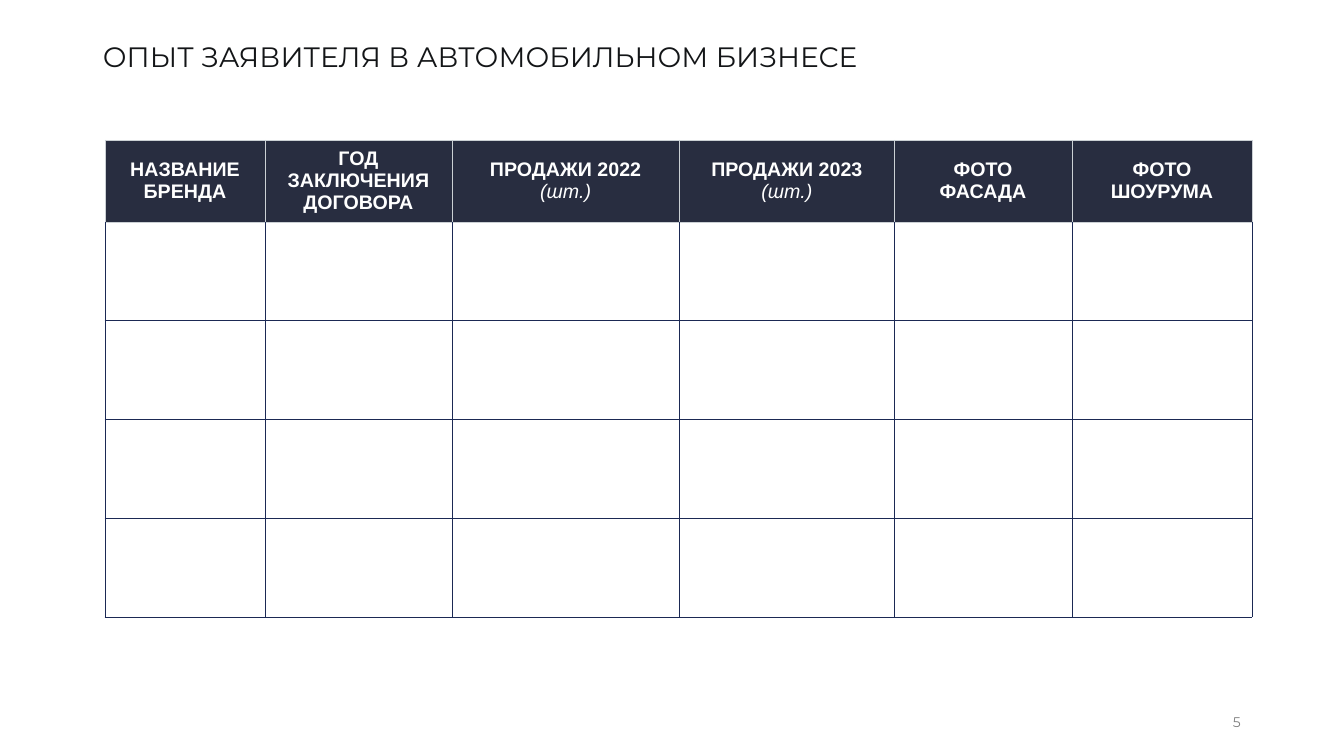
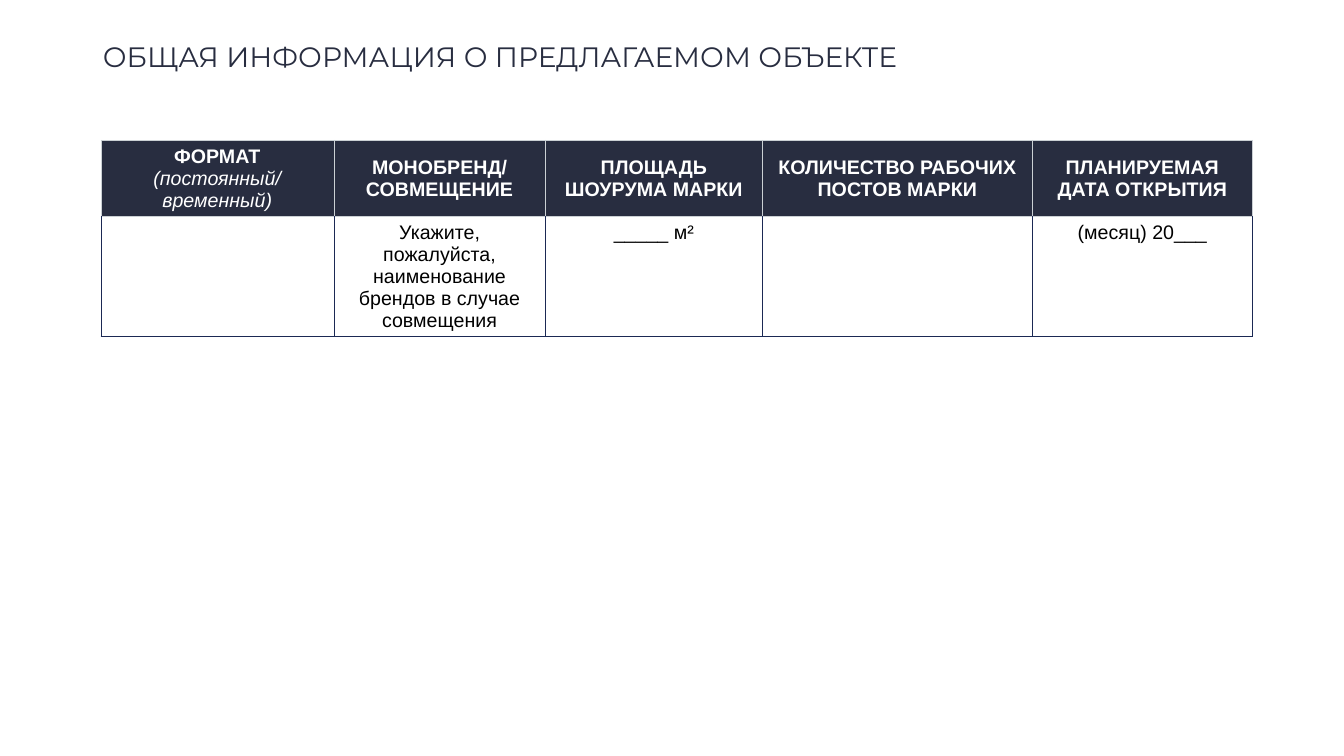
from lxml import etree
from pptx import Presentation
from pptx.dml.color import RGBColor
from pptx.enum.text import MSO_ANCHOR, PP_ALIGN
from pptx.oxml.ns import qn
from pptx.util import Pt

LEFT, CENTER = PP_ALIGN.LEFT, PP_ALIGN.CENTER
MIDDLE, TOP = MSO_ANCHOR.MIDDLE, MSO_ANCHOR.TOP

WHITE = RGBColor(0xFF, 0xFF, 0xFF)
BLACK = RGBColor(0x00, 0x00, 0x00)
INK = RGBColor(0x13, 0x15, 0x17)
DARK = RGBColor(0x28, 0x2D, 0x40)
NAVY = RGBColor(0x1B, 0x29, 0x54)
PALE = RGBColor(0xCB, 0xD0, 0xD4)
GRAY = RGBColor(0x80, 0x80, 0x80)

HEAD_FONT, CELL_FONT = "Montserrat", "Arial"
SCALE = 9144
SIZE = (1333, 750)
TITLE_BOX = (92, 22, 1150, 72)
PAGE_BOX = (1213, 702, 41, 29)
TABLE_TOP = 139

SLIDES = [
    {
        "title": "ОПЫТ ЗАЯВИТЕЛЯ В АВТОМОБИЛЬНОМ БИЗНЕСЕ",
        "color": INK,
        "page": "5",
        "left": 104,
        "cols": [159, 185, 226, 213, 176, 179],
        "rows": [81] + [98] * 4,
        "head": [
            ["НАЗВАНИЕ БРЕНДА"],
            ["ГОД ЗАКЛЮЧЕНИЯ ДОГОВОРА"],
            ["ПРОДАЖИ 2022", "(шт.)"],
            ["ПРОДАЖИ 2023", "(шт.)"],
            ["ФОТО", "ФАСАДА"],
            ["ФОТО", "ШОУРУМА"],
        ],
        "body": [[""] * 6] * 4,
    },
    {
        "title": "ОБЩАЯ ИНФОРМАЦИЯ О ПРЕДЛАГАЕМОМ ОБЪЕКТЕ",
        "color": DARK,
        "page": "",
        "left": 100,
        "cols": [231, 210, 215, 268, 218],
        "rows": [72, 118],
        "head": [
            ["ФОРМАТ", "(постоянный/", "временный)"],
            ["МОНОБРЕНД/ СОВМЕЩЕНИЕ"],
            ["ПЛОЩАДЬ ШОУРУМА МАРКИ"],
            ["КОЛИЧЕСТВО РАБОЧИХ ПОСТОВ МАРКИ"],
            ["ПЛАНИРУЕМАЯ ДАТА ОТКРЫТИЯ"],
        ],
        "body": [[
            "",
            "Укажите, пожалуйста, наименование брендов в случае совмещения",
            "_____ м²",
            "",
            "(месяц) 20___",
        ]],
    },
]


def px(n):
    return n * SCALE


def place(shape, box):
    shape.left, shape.top, shape.width, shape.height = map(px, box)


def style(para, face, size, color, align):
    para.alignment = align
    font = para.font
    font.name, font.size, font.color.rgb = face, Pt(size), color


def border(cell, side, color):
    props = cell._tc.get_or_add_tcPr()
    line = etree.SubElement(props, qn(f"a:ln{side}"), w=str(Pt(0.25)))
    fill = etree.SubElement(line, qn("a:solidFill"))
    etree.SubElement(fill, qn("a:srgbClr"), val=str(color))


def fill_cell(cell, lines, row):
    head = row == 0
    for side in "LRTB":
        pale = head or (row == 1 and side == "T")
        border(cell, side, PALE if pale else NAVY)
    cell.fill.solid()
    cell.fill.fore_color.rgb = DARK if head else WHITE
    cell.vertical_anchor = MIDDLE if head else TOP
    frame = cell.text_frame
    frame.text = "\n".join(lines)
    for i, para in enumerate(frame.paragraphs):
        style(para, CELL_FONT, 14, WHITE if head else BLACK, CENTER)
        note = head and not lines[i].isupper()
        para.font.bold = head and not note
        para.font.italic = note


def add_title(slide, text, color):
    title = slide.shapes.title
    place(title, TITLE_BOX)
    frame = title.text_frame
    frame.text = text
    frame.vertical_anchor = MIDDLE
    para = frame.paragraphs[0]
    para.line_spacing = 0.9
    style(para, HEAD_FONT, 20, color, LEFT)


def add_page(slide, text):
    frame = slide.shapes.add_textbox(*map(px, PAGE_BOX)).text_frame
    frame.word_wrap = True
    frame.vertical_anchor = MIDDLE
    frame.text = text
    style(frame.paragraphs[0], HEAD_FONT, 10, GRAY, LEFT)


def add_grid(slide, data):
    cols, rows = data["cols"], data["rows"]
    box = (data["left"], TABLE_TOP, sum(cols), sum(rows))
    table = slide.shapes.add_table(len(rows), len(cols), *map(px, box)).table
    table.first_row = table.horz_banding = False
    for col, width in zip(table.columns, cols):
        col.width = px(width)
    for row, height in zip(table.rows, rows):
        row.height = px(height)
    body = [[[text] for text in row] for row in data["body"]]
    for r, row in enumerate([data["head"]] + body):
        for c, lines in enumerate(row):
            fill_cell(table.cell(r, c), lines, r)


def main():
    deck = Presentation()
    deck.slide_width, deck.slide_height = map(px, SIZE)
    for data in SLIDES:
        slide = deck.slides.add_slide(deck.slide_layouts[5])
        add_title(slide, data["title"], data["color"])
        add_grid(slide, data)
        if data["page"]:
            add_page(slide, data["page"])
    deck.save("out.pptx")


if __name__ == "__main__":
    main()
